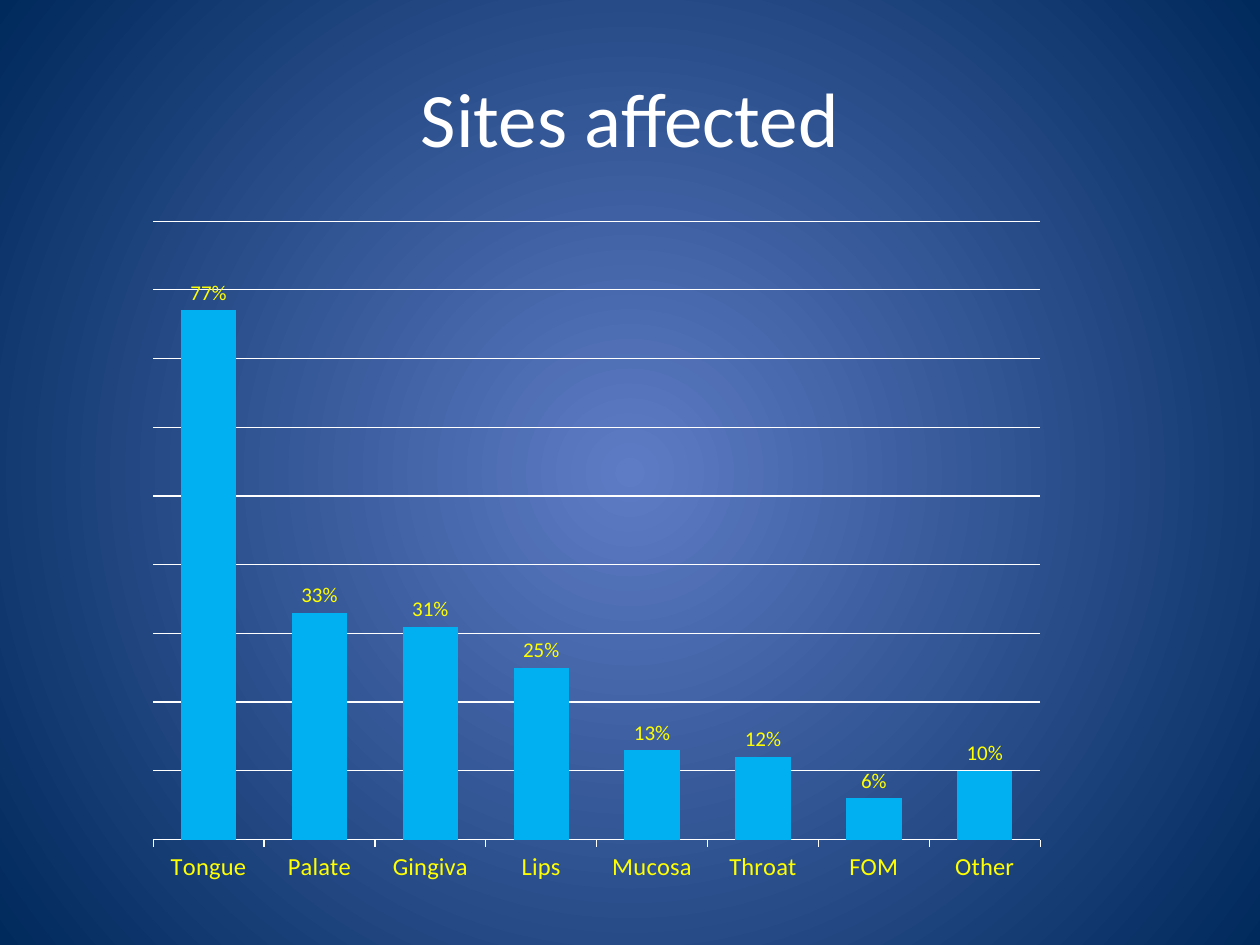
from typing import NamedTuple

import lxml.etree
import pptx
import pptx.chart.data
import pptx.dml.color
import pptx.enum.chart
import pptx.enum.text
import pptx.oxml
import pptx.oxml.ns
import pptx.util

Pt = pptx.util.Pt
FONT = "Calibri"
COLORS = {
    "glow": "5E7CC5",
    "edge": "00295C",
    "bar": "00B0F0",
    "label": "FFFF00",
    "line": "FFFFFF",
}


class Site(NamedTuple):
    name: str
    share: int


SITES = [
    Site("Tongue", 77),
    Site("Palate", 33),
    Site("Gingiva", 31),
    Site("Lips", 25),
    Site("Mucosa", 13),
    Site("Throat", 12),
    Site("FOM", 6),
    Site("Other", 10),
]


def color(name: str) -> pptx.dml.color.RGBColor:
    return pptx.dml.color.RGBColor.from_string(COLORS[name])


def style(font, size: float, name: str) -> None:
    font.name = FONT
    font.size = Pt(size)
    font.color.rgb = color(name)


def rule(line) -> None:
    """Give a chart line the common thin stroke."""
    line.color.rgb = color("line")
    line.width = Pt(0.75)


def paint(slide) -> None:
    """Fill the background with a gradient that spreads from the centre."""
    fill = slide.background.fill
    fill.gradient()
    for stop, name, place in zip(fill.gradient_stops, ("glow", "edge"), (0, 1)):
        stop.color.rgb = color(name)
        stop.position = place
    grad = slide.element.find(".//" + pptx.oxml.ns.qn("a:gradFill"))
    grad.remove(grad.find(pptx.oxml.ns.qn("a:lin")))
    grad.append(pptx.oxml.parse_xml(
        f'<a:path {pptx.oxml.ns.nsdecls("a")} path="circle">'
        '<a:fillToRect l="50000" t="50000" r="50000" b="50000"/></a:path>'
    ))


def place(chart, x: float, y: float, w: float, h: float) -> None:
    """Set the inner plot area as fractions of the chart."""
    qn = pptx.oxml.ns.qn
    area = chart.element.find(".//" + qn("c:plotArea"))
    old = area.find(qn("c:layout"))
    if old is not None:
        area.remove(old)
    layout = lxml.etree.Element(qn("c:layout"))
    manual = lxml.etree.SubElement(layout, qn("c:manualLayout"))
    parts = {"layoutTarget": "inner", "xMode": "edge", "yMode": "edge",
             "x": x, "y": y, "w": w, "h": h}
    for tag, val in parts.items():
        lxml.etree.SubElement(manual, qn(f"c:{tag}")).set("val", str(val))
    area.insert(0, layout)


def plot(slide) -> None:
    data = pptx.chart.data.CategoryChartData(number_format='0"%"')
    data.categories = [site.name for site in SITES]
    data.add_series("Series 1", [site.share for site in SITES])
    chart = slide.shapes.add_chart(
        pptx.enum.chart.XL_CHART_TYPE.COLUMN_CLUSTERED,
        Pt(65.5), Pt(126), Pt(551), Pt(397.5), data,
    ).chart
    chart.has_legend = False
    chart.has_title = False
    style(chart.font, 20, "line")
    place(chart, 0.04, 0, 0.92, 0.89)

    bars = chart.plots[0]
    bars.gap_width = 100
    bars.vary_by_categories = False
    fill = bars.series[0].format.fill
    fill.solid()
    fill.fore_color.rgb = color("bar")

    bars.has_data_labels = True
    labels = bars.data_labels
    labels.show_value = True
    labels.position = pptx.enum.chart.XL_LABEL_POSITION.OUTSIDE_END
    style(labels.font, 12, "label")

    sites = chart.category_axis
    sites.major_tick_mark = pptx.enum.chart.XL_TICK_MARK.OUTSIDE
    style(sites.tick_labels.font, 14, "label")
    rule(sites.format.line)

    scale = chart.value_axis
    scale.visible = False
    scale.minimum_scale, scale.maximum_scale, scale.major_unit = 0, 90, 10
    scale.has_major_gridlines = True
    rule(scale.major_gridlines.format.line)


def head(slide, text: str) -> None:
    title = slide.shapes.title
    title.left, title.top, title.width, title.height = Pt(36), Pt(21.6), Pt(648), Pt(90)
    frame = title.text_frame
    frame.text = text
    frame.vertical_anchor = pptx.enum.text.MSO_ANCHOR.MIDDLE
    line = frame.paragraphs[0]
    line.alignment = pptx.enum.text.PP_ALIGN.CENTER
    style(line.runs[0].font, 44, "line")


def main() -> None:
    deck = pptx.Presentation()
    deck.slide_width, deck.slide_height = Pt(720), Pt(540)
    slide = deck.slides.add_slide(deck.slide_layouts[5])
    paint(slide)
    head(slide, "Sites affected")
    plot(slide)
    deck.save("out.pptx")


if __name__ == "__main__":
    main()
